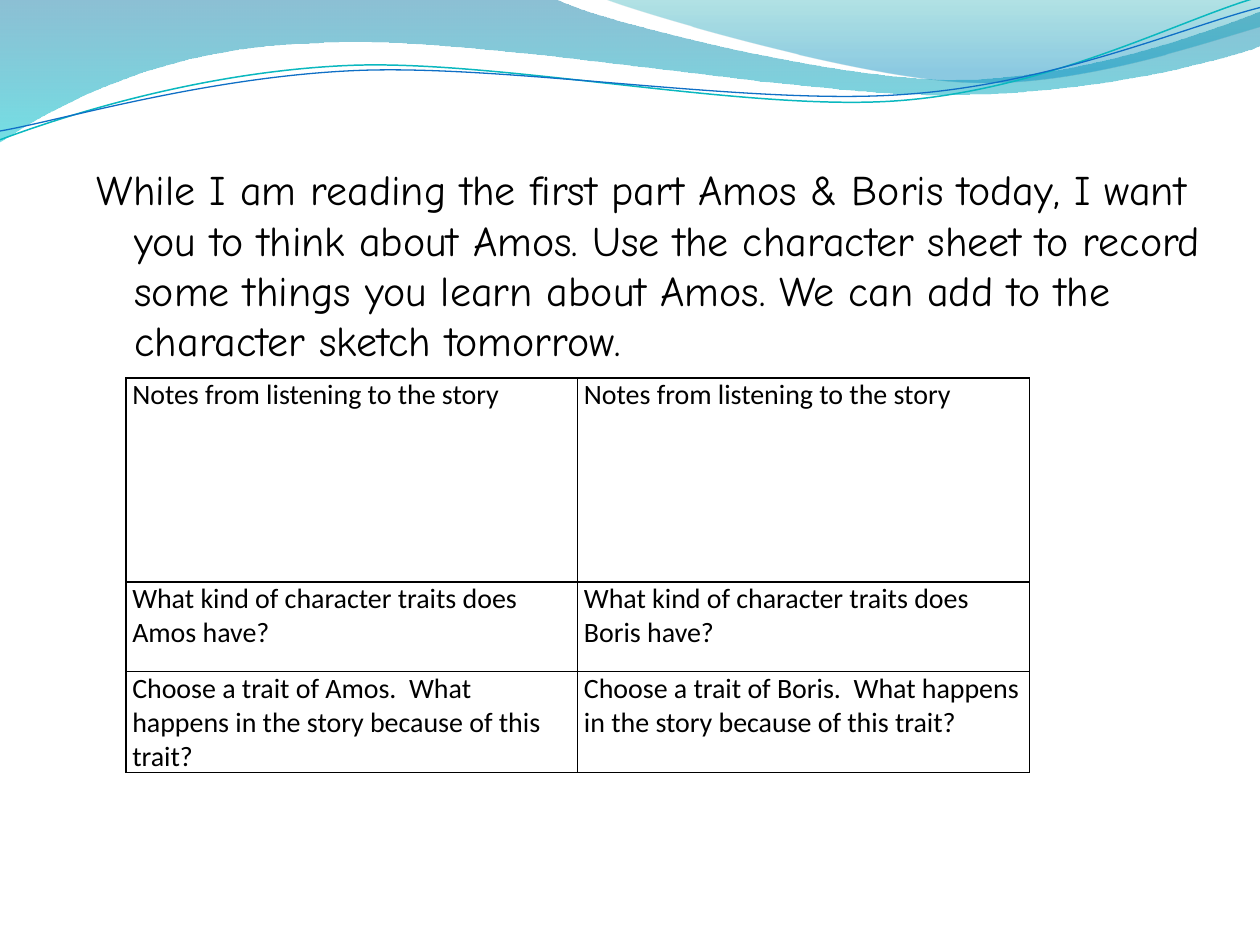
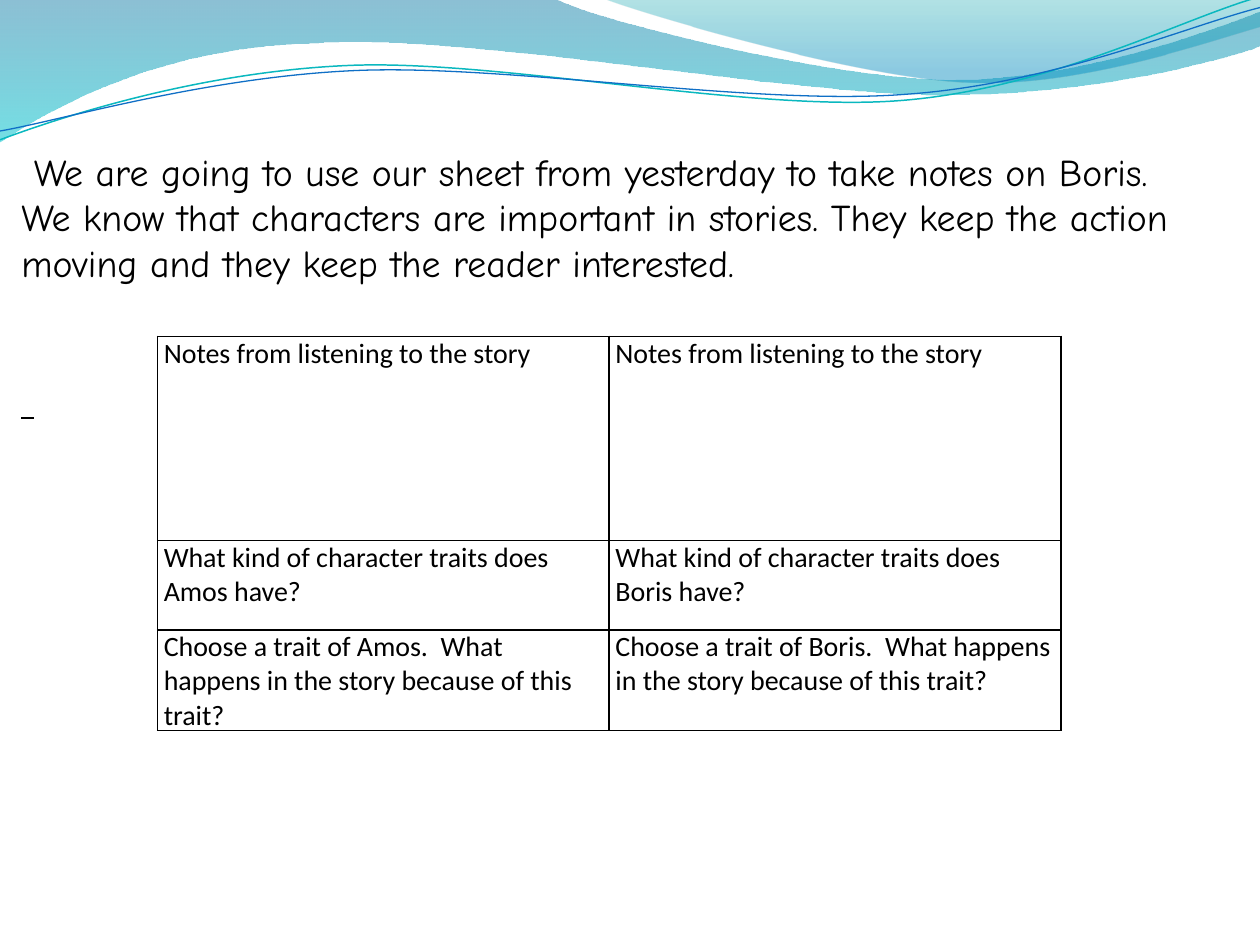
from dataclasses import dataclass
from pptx import Presentation, util as u
from pptx.dml import color
from pptx.enum import text
from pptx.oxml import ns, xmlchemy as xc


@dataclass(frozen=True)
class Theme:
    ink: str = "000000"
    teal: str = "0AB8BF"
    blue: str = "0F6FC6"
    # Gradient stops: position, colour, opacity in percent
    wave: tuple = ((0, "0074A1", 45), (1, "00C6CF", 55))
    crest: tuple = ((0, "00A1A9", 30), (0.8, "008BBF", 45))
    hand: str = "Comic Neue"
    sans: str = "Calibri"
    body: float = 24
    head: float = 21.6
    cell: float = 16
    rule: float = 1


T = Theme()

# Outlines in inches: a pair is a corner, six numbers are a curve
WAVE = [(0, 0), (4.4, -0.01), (4.76, 0.17, 6.64, 0.63, 7.58, 0.63),
        (8.53, 0.63, 9.58, 0.26, 10, 0.09), (10.01, 0.36),
        (9.83, 0.44, 8.7, 0.76, 7.46, 0.75),
        (6.22, 0.75, 3.82, 0.28, 2.57, 0.34),
        (1.29, 0.36, 0.46, 0.83, -0.01, 1.13), (0, 0)]
CREST = [(4.79, -0.01), (5.09, 0.11, 6.82, 0.62, 7.69, 0.65),
         (8.56, 0.69, 9.61, 0.32, 10, 0.21), (10, 0), (4.79, -0.01)]
TEAL = [(0, 1.11), (0.48, 0.93, 1.58, 0.57, 2.77, 0.52),
        (3.95, 0.47, 5.93, 0.89, 7.13, 0.8),
        (8.33, 0.71, 9.38, 0.15, 9.98, -0.02)]
BLUE = [(0, 1.04), (0.47, 0.96, 1.64, 0.61, 2.83, 0.56),
        (4.03, 0.51, 5.97, 0.84, 7.17, 0.75),
        (8.36, 0.67, 9.41, 0.21, 10, 0.06)]

ROWS = [["Notes from listening to the story"] * 2]
ROWS += [[line.format(name) for name in ("Amos", "Boris")] for line in (
    "What kind of character traits does {} have?",
    "Choose a trait of {}.  What happens in the story because of this trait?")]
HIGH = (1.62, 0.71, 0.67)

TASK = ("While I am reading the first part Amos & Boris today, I want you to "
        "think about Amos. Use the character sheet to record some things you "
        "learn about Amos. We can add to the character sketch tomorrow.")
PLAN = ("We are going to use our sheet from yesterday to take notes on Boris. "
        "We know that characters are important in stories. They keep the "
        "action moving and they keep the reader interested.")


def rgb(code):
    return color.RGBColor.from_string(code)


def outline(slide, path, close):
    pts = [(u.Inches(seg[i]), u.Inches(seg[i + 1]))
           for seg in path for i in range(0, len(seg), 2)]
    pen = slide.shapes.build_freeform(*pts[0])
    pen.add_line_segments(pts[1:], close=close)
    shape = pen.convert_to_shape()
    shape.shadow.inherit = False
    # Join each three points of a curve into one Bezier segment
    lines = iter(list(shape._element.iter(ns.qn("a:lnTo"))))
    for seg in path[1:]:
        first = next(lines)
        if len(seg) == 6:
            curve = xc.OxmlElement("a:cubicBezTo")
            first.addprevious(curve)
            for line in (first, next(lines), next(lines)):
                curve.append(line[0])
                line.getparent().remove(line)
    return shape


def band(slide, path, stops):
    shape = outline(slide, path, True)
    shape.line.fill.background()
    shape.fill.gradient()
    shape.fill.gradient_angle = 270
    for stop, (pos, code, _) in zip(shape.fill.gradient_stops, stops):
        stop.position = pos
        stop.color.rgb = rgb(code)
    # Opacity of each stop
    for clr, (_, _, pct) in zip(shape._element.iter(ns.qn("a:srgbClr")), stops):
        alpha = xc.OxmlElement("a:alpha")
        alpha.set("val", str(pct * 1000))
        clr.append(alpha)


def strand(slide, path, code, width):
    shape = outline(slide, path, False)
    shape.fill.background()
    shape.line.color.rgb = rgb(code)
    shape.line.width = u.Pt(width)


def waves(slide):
    band(slide, WAVE, T.wave)
    band(slide, CREST, T.crest)
    strand(slide, TEAL, T.teal, 0.85)
    strand(slide, BLUE, T.blue, 0.75)


def style(para, font, size):
    for run in para.runs:
        run.font.name = font
        run.font.size = u.Pt(size)
        run.font.color.rgb = rgb(T.ink)


def prose(slide, box, words, size, pad, top, left, first):
    """Text block; left and first are the margin and first-line indent."""
    frame = slide.shapes.add_textbox(*map(u.Inches, box)).text_frame
    frame.word_wrap = True
    frame.vertical_anchor = text.MSO_ANCHOR.TOP
    frame.margin_left = frame.margin_right = u.Inches(pad)
    frame.margin_top, frame.margin_bottom = u.Inches(top), 0
    para = frame.paragraphs[0]
    para.text = words
    style(para, T.hand, size)
    props = para._p.get_or_add_pPr()
    props.set("marL", str(u.Inches(left)))
    props.set("indent", str(u.Inches(first)))
    return frame


def frame_cell(cell):
    props = cell._tc.get_or_add_tcPr()
    for side in "LRTB":
        edge = xc.OxmlElement("a:ln" + side)
        edge.set("w", str(u.Pt(T.rule)))
        fill = xc.OxmlElement("a:solidFill")
        clr = xc.OxmlElement("a:srgbClr")
        clr.set("val", T.ink)
        fill.append(clr)
        edge.append(fill)
        props.append(edge)
    cell.fill.background()


def sheet(slide, left, top, width=7.17, height=3.13):
    """Character sheet for Amos and Boris."""
    box = map(u.Inches, (left, top, width, height))
    holder = slide.shapes.add_table(len(ROWS), 2, *box)
    grid = holder.table
    grid.first_row = grid.horz_banding = False
    for col in grid.columns:
        col.width = u.Inches(width / 2)
    for row, high, line in zip(grid.rows, HIGH, ROWS):
        row.height = u.Inches(high)
        for cell, words in zip(row.cells, line):
            cell.margin_left = cell.margin_right = u.Inches(0.05)
            cell.margin_top = cell.margin_bottom = 0
            cell.text_frame.text = words
            style(cell.text_frame.paragraphs[0], T.sans, T.cell)
            frame_cell(cell)
    holder.height = u.Inches(height)


def first_day(slide):
    waves(slide)
    prose(slide, (0.67, 1.25, 9.08, 5.58), TASK, T.body, 0.1, 0.05, 0.3, -0.3)
    sheet(slide, 1, 3)


def next_day(slide):
    waves(slide)
    frame = prose(slide, (0.17, 0.77, 9.33, 1.65), PLAN, T.head, 0, 0.41, 0, 0.1)
    # Short underlined mark below the text
    mark = frame.add_paragraph()
    mark.text = " "
    mark.space_before = u.Pt(52)
    style(mark, T.hand, T.head)
    mark.runs[0].font.underline = True
    sheet(slide, 1.25, 2.67)


def main():
    deck = Presentation()
    deck.slide_width, deck.slide_height = u.Inches(10), u.Inches(7.5)
    for build in (first_day, next_day):
        build(deck.slides.add_slide(deck.slide_layouts[6]))
    deck.save("out.pptx")


if __name__ == "__main__":
    main()
